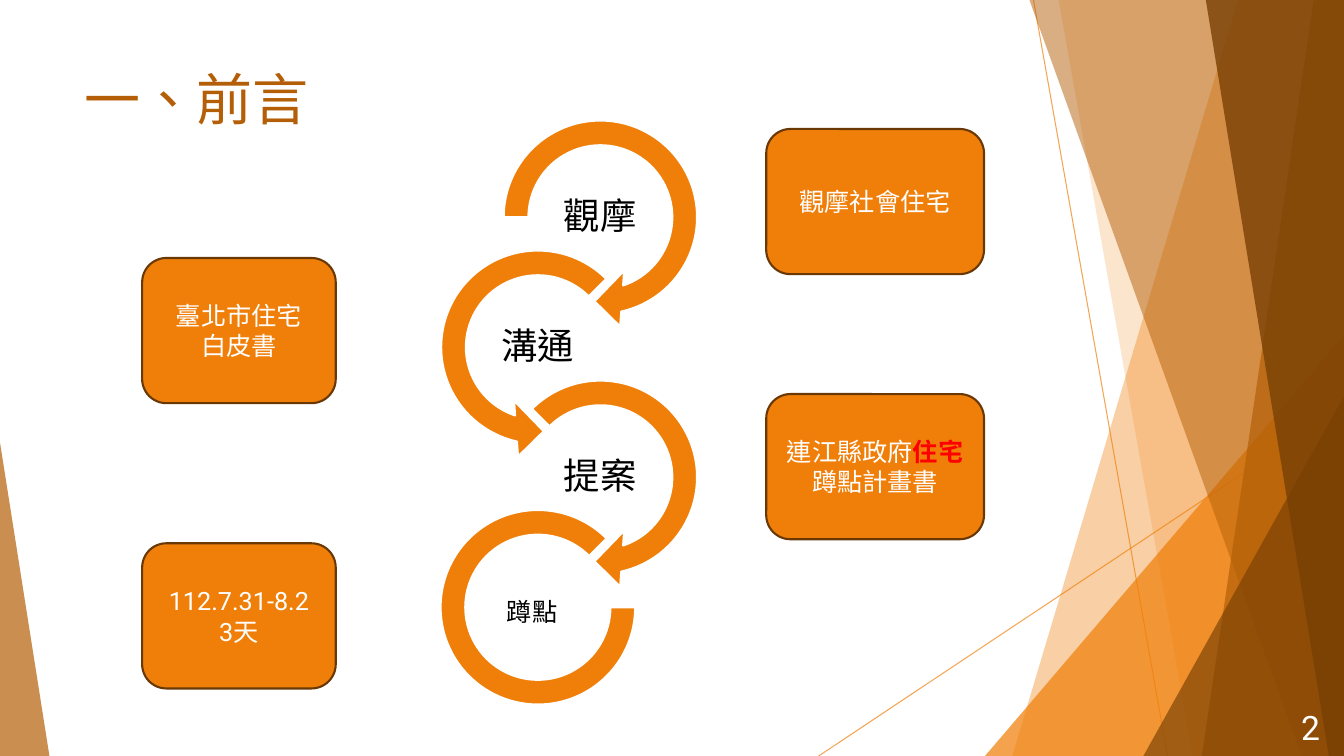
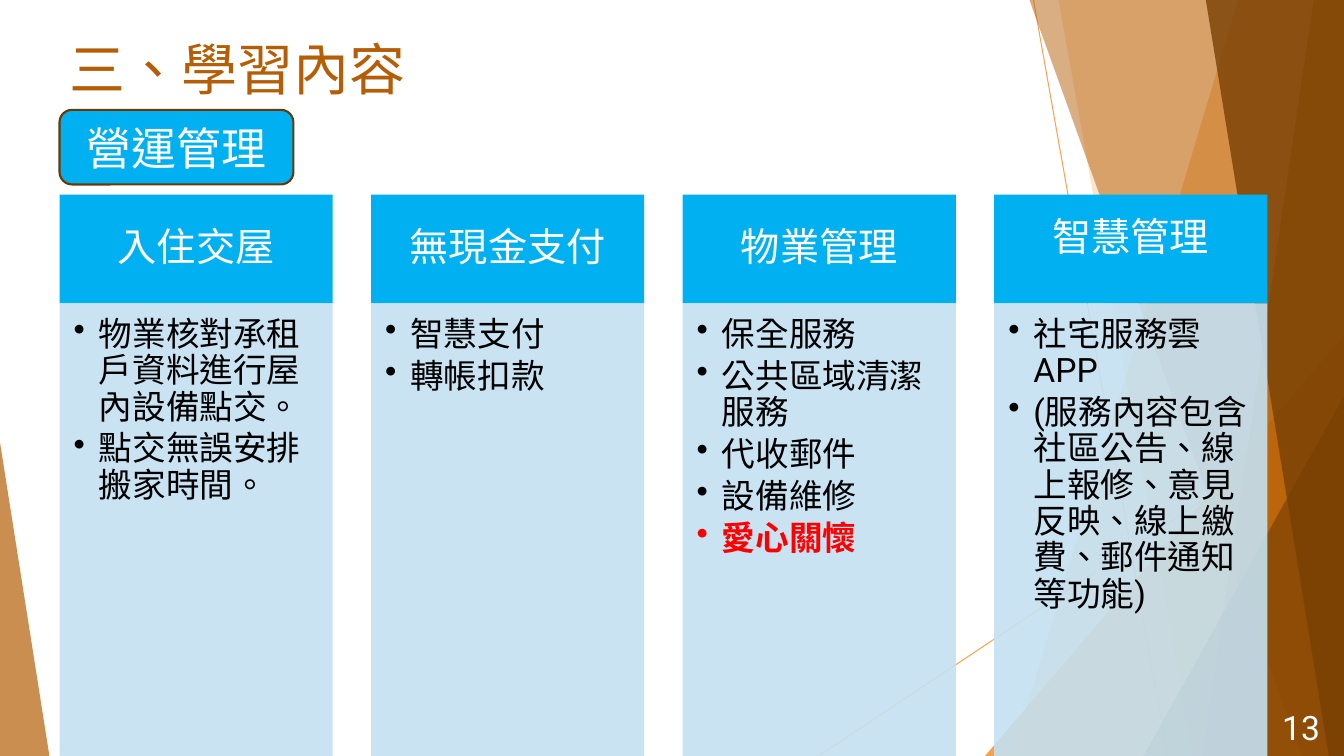
import dataclasses

import pptx
import pptx.dml.color
import pptx.enum.lang
import pptx.enum.shapes
import pptx.enum.text
import pptx.oxml.ns
import pptx.util
from lxml import etree

Inches = pptx.util.Inches
Pt = pptx.util.Pt
RGBColor = pptx.dml.color.RGBColor
SHAPE = pptx.enum.shapes.MSO_SHAPE
ALIGN = pptx.enum.text.PP_ALIGN
ANCHOR = pptx.enum.text.MSO_ANCHOR
qn = pptx.oxml.ns.qn

# Shared look
ORANGE = RGBColor(0xF0, 0x7F, 0x09)
RUST = RGBColor(0xB4, 0x5F, 0x07)
BROWN = RGBColor(0x78, 0x40, 0x04)
OUTLINE = RGBColor(0x69, 0x38, 0x04)
BLUE = RGBColor(0x00, 0xB0, 0xF0)
PALE_BLUE = RGBColor(0xC4, 0xE1, 0xF2)
RED = RGBColor(0xFF, 0x00, 0x00)
WHITE = RGBColor(0xFF, 0xFF, 0xFF)
BLACK = RGBColor(0x00, 0x00, 0x00)
TITLE_FONT = "Noto Sans CJK SC"
BODY_FONT = "Roboto"
SLIDE_W, SLIDE_H = 13.33, 7.5
DEFAULT_INSETS = (0.1, 0.05, 0.1, 0.05)


@dataclasses.dataclass
class Style:
    size: int
    color: RGBColor
    align: ALIGN = ALIGN.LEFT
    anchor: ANCHOR = ANCHOR.TOP
    insets: tuple = DEFAULT_INSETS
    spacing: float = 1.0
    after: int = 0
    bullet: bool = False
    font: str = BODY_FONT


TITLE = Style(40, RUST, spacing=0.9, font=TITLE_FONT)
PAGE_NUMBER = Style(24, WHITE, ALIGN.RIGHT, ANCHOR.MIDDLE)
CARD = Style(18, WHITE, ALIGN.CENTER, ANCHOR.MIDDLE)
BADGE = dataclasses.replace(CARD, size=32)
STEP = Style(26, BLACK, ALIGN.CENTER, ANCHOR.MIDDLE, (0.02,) * 4, 0.9)
LAST_STEP = Style(18, BLACK)
HEADING = Style(28, WHITE, ALIGN.CENTER, ANCHOR.MIDDLE, (0.22, 0.12, 0.22, 0.12), 0.9)
RAISED_HEADING = dataclasses.replace(HEADING, insets=(0.22, 0.12, 0.22, 0.32))
ITEMS = Style(24, BLACK, insets=(0.14, 0.14, 0.19, 0.21), spacing=0.9, after=4, bullet=True)


@dataclasses.dataclass
class Highlight:
    text: str


def set_alpha(color_format_parent, percent):
    """Make the solid colour below an element partly transparent."""
    color = color_format_parent.find(".//" + qn("a:srgbClr"))
    etree.SubElement(color, qn("a:alpha"), val=str(percent * 1000))


def write(shape, paragraphs, style):
    """Fill a shape with paragraphs, each a list of strings and Highlights."""
    frame = shape.text_frame
    frame.word_wrap = True
    frame.vertical_anchor = style.anchor
    (frame.margin_left, frame.margin_top,
     frame.margin_right, frame.margin_bottom) = map(Inches, style.insets)
    for index, parts in enumerate(paragraphs):
        paragraph = frame.add_paragraph() if index else frame.paragraphs[0]
        paragraph.alignment = style.align
        paragraph.line_spacing = style.spacing
        paragraph.space_after = Pt(style.after)
        if style.bullet:
            properties = paragraph._p.get_or_add_pPr()
            properties.set("marL", str(Inches(0.25)))
            properties.set("indent", str(-Inches(0.25)))
            etree.SubElement(properties, qn("a:buChar"), char="•")
        for part in parts:
            marked = isinstance(part, Highlight)
            run = paragraph.add_run()
            run.text = part.text if marked else part
            run.font.size = Pt(style.size)
            run.font.bold = marked
            run.font.color.rgb = RED if marked else style.color
            run.font.name = style.font
            run.font.language_id = pptx.enum.lang.MSO_LANGUAGE_ID.TRADITIONAL_CHINESE
            etree.SubElement(run._r.get_or_add_rPr(), qn("a:ea"), typeface=style.font)


def paint(shape, fill, alpha=100, line=None):
    shape.shadow.inherit = False
    shape.fill.solid()
    shape.fill.fore_color.rgb = fill
    if alpha < 100:
        set_alpha(shape._element.spPr, alpha)
    if line is None:
        shape.line.fill.background()
    else:
        shape.line.color.rgb = line
        shape.line.width = Pt(1.5)
    return shape


def add_shape(slide, kind, box, fill, alpha=100, line=None, adjust=()):
    shape = slide.shapes.add_shape(kind, *map(Inches, box))
    for index, value in enumerate(adjust):
        shape.adjustments[index] = value
    return paint(shape, fill, alpha, line)


def add_text(slide, box, paragraphs, style):
    write(slide.shapes.add_textbox(*map(Inches, box)), paragraphs, style)


def add_card(slide, box, paragraphs, fill=ORANGE, style=CARD):
    card = add_shape(slide, SHAPE.FLOWCHART_ALTERNATE_PROCESS, box, fill, line=OUTLINE)
    write(card, paragraphs, style)


# Background facets
def add_ray(slide, start, end):
    ray = slide.shapes.add_connector(
        pptx.enum.shapes.MSO_CONNECTOR.STRAIGHT, *map(Inches, start + end))
    ray.line.color.rgb = ORANGE
    ray.line.width = Pt(0.75)
    set_alpha(ray._element.spPr, 70)
    etree.SubElement(ray._element.spPr, qn("a:effectLst"))


def add_shard(slide, top_x, bottom_x, color, alpha):
    """Full-height facet from a slanted left edge to the slide's right edge."""
    corners = [(SLIDE_W, 0), (SLIDE_W, SLIDE_H), (bottom_x, SLIDE_H)]
    builder = slide.shapes.build_freeform(Inches(top_x), Inches(0))
    builder.add_line_segments([(Inches(x), Inches(y)) for x, y in corners], close=True)
    paint(builder.convert_to_shape(), color, alpha)


def add_corner(slide, left, top, width, apex, color, alpha):
    """Triangle standing on the slide's bottom edge."""
    add_shape(slide, SHAPE.ISOSCELES_TRIANGLE, (left, top, width, SLIDE_H - top),
              color, alpha, adjust=[apex])


def add_backdrop(slide):
    add_ray(slide, (10.25, 0), (11.58, SLIDE_H))
    add_ray(slide, (SLIDE_W, 4.03), (8.12, SLIDE_H))
    add_shard(slide, 12.28, 10.04, ORANGE, 36)
    add_shard(slide, 10.5, 11.83, ORANGE, 20)
    add_corner(slide, 9.77, 3.33, 3.56, 1, ORANGE, 72)
    add_shard(slide, 10.21, 12.91, RUST, 50)
    add_shard(slide, 13.03, 11.92, RUST, 70)
    add_shard(slide, 11.96, 13.18, BROWN, 80)
    add_corner(slide, 11.34, 3.93, 1.99, 1, BROWN, 66)
    add_corner(slide, 0, 4.39, 0.49, 0, RUST, 70)


def start_slide(deck, title, left, top):
    slide = deck.slides.add_slide(deck.slide_layouts[6])
    add_backdrop(slide)
    add_text(slide, (left, top, 9.4, 1.44), [[title]], TITLE)
    return slide


def add_page_number(slide, number):
    add_text(slide, (12.44, 7.01, 0.75, 0.4), [[str(number)]], PAGE_NUMBER)


# Winding chain of steps
def add_step_chain(slide, left, top):
    ring, shift, pitch, trim = 2.23, 0.62, 1.29, 0.15
    arrows = [
        ("觀摩", SHAPE.CIRCULAR_ARROW, 45, 108),
        ("溝通", SHAPE.LEFT_CIRCULAR_ARROW, 63, 189),
        ("提案", SHAPE.CIRCULAR_ARROW, 45, 135),
    ]
    for index, (label, kind, head, tail) in enumerate(arrows):
        x = left + (0 if index % 2 else shift)
        y = top + index * pitch
        add_shape(slide, kind, (x, y, ring, ring), ORANGE, line=WHITE,
                  adjust=[0.11, 11.423, head, tail, 0.125])
        add_text(slide, (x + 0.49, y + 0.81, 1.25, 0.62), [[label]], STEP)
    y = top + len(arrows) * pitch
    size = ring - 2 * trim
    add_shape(slide, SHAPE.BLOCK_ARC, (left + trim, y + trim, size, size), ORANGE,
              line=WHITE, adjust=[0, 189, 0.127])
    add_text(slide, (left + 0.71, y + 0.96, 0.86, 0.4), [["蹲點"]], LAST_STEP)


def add_preface_slide(deck):
    slide = start_slide(deck, "一、前言", 0.74, 0.67)
    add_step_chain(slide, 4.22, 1.04)
    left_x, left_w, right_x, right_w, height = 1.41, 1.92, 7.6, 2.16, 1.44
    add_card(slide, (right_x, 1.28, right_w, height), [["觀摩社會住宅"]])
    add_card(slide, (left_x, 2.56, left_w, height), [["臺北市住宅"], ["白皮書"]])
    add_card(slide, (right_x, 3.91, right_w, height),
             [["連江縣政府", Highlight("住宅"), "蹲點計畫書"]])
    add_card(slide, (left_x, 5.39, left_w, height), [["112.7.31-8.2"], ["3天"]])
    add_page_number(slide, 2)


# Columns of topics
def add_topic_column(slide, left, top, heading, items, heading_style):
    width, heading_h = 2.71, 1.08
    header = add_shape(slide, SHAPE.RECTANGLE, (left, top, width, heading_h), BLUE)
    write(header, [[heading]], heading_style)
    body_top = top + heading_h
    body = add_shape(slide, SHAPE.RECTANGLE,
                     (left, body_top, width, SLIDE_H - body_top), PALE_BLUE, 90)
    write(body, [[item] for item in items], ITEMS)


def add_learning_slide(deck):
    left = 0.59
    slide = start_slide(deck, "三、學習內容", left, 0.37)
    add_card(slide, (left, 1.09, 2.32, 0.74), [["營運管理"]], BLUE, BADGE)
    topics = [
        ("入住交屋", ["物業核對承租戶資料進行屋內設備點交。", "點交無誤安排搬家時間。"], HEADING),
        ("無現金支付", ["智慧支付", "轉帳扣款"], HEADING),
        ("物業管理", ["保全服務", "公共區域清潔服務", "代收郵件", "設備維修",
                  Highlight("愛心關懷")], HEADING),
        ("智慧管理", ["社宅服務雲APP",
                  "(服務內容包含社區公告、線上報修、意見反映、線上繳費、郵件通知等功能)"],
         RAISED_HEADING),
    ]
    for index, topic in enumerate(topics):
        add_topic_column(slide, left + index * 3.09, 1.93, *topic)
    add_page_number(slide, 13)


def main():
    deck = pptx.Presentation()
    deck.slide_width = Inches(SLIDE_W)
    deck.slide_height = Inches(SLIDE_H)
    add_preface_slide(deck)
    add_learning_slide(deck)
    deck.save("out.pptx")


if __name__ == "__main__":
    main()
